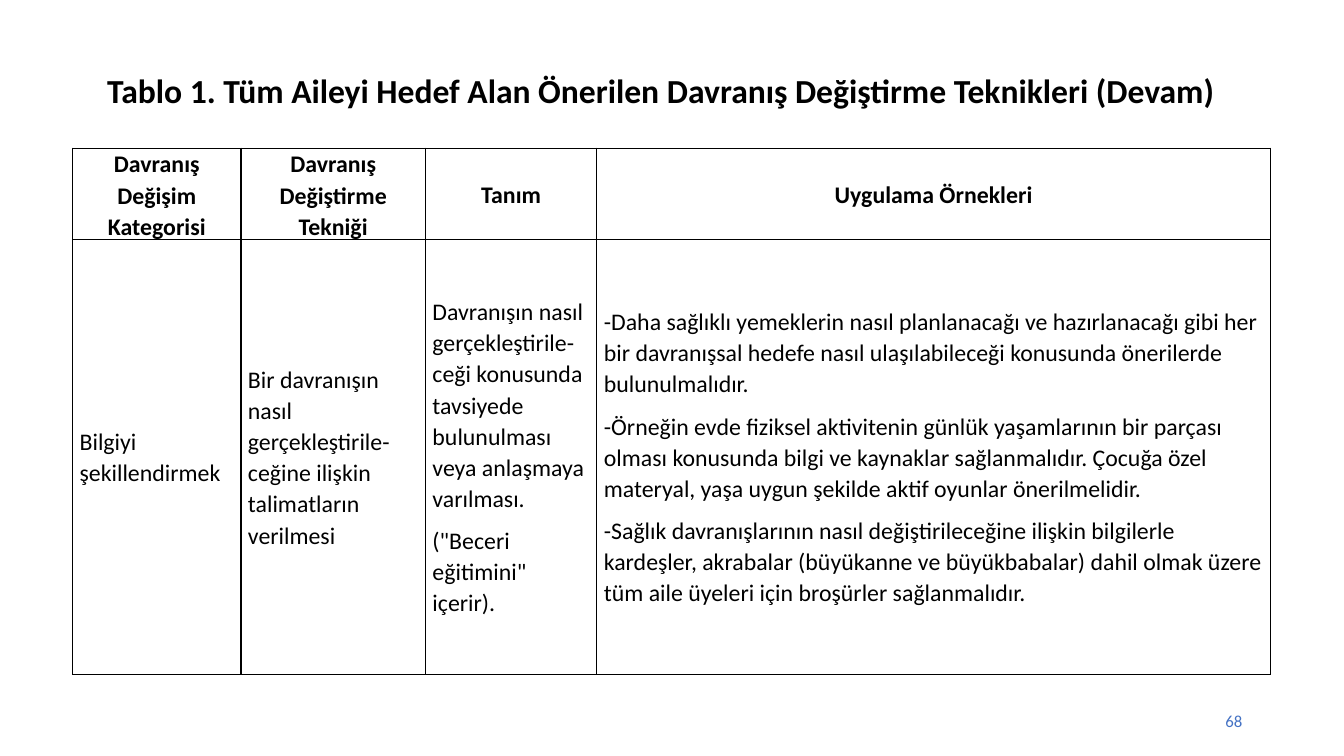
"""Build the slide with the table of behaviour change techniques for families."""
import pptx
import pptx.dml.color
import pptx.enum.text
import pptx.oxml
import pptx.oxml.ns
import pptx.util

Inches = pptx.util.Inches
Pt = pptx.util.Pt
ALIGN = pptx.enum.text.PP_ALIGN
MIDDLE = pptx.enum.text.MSO_ANCHOR.MIDDLE
BLACK = pptx.dml.color.RGBColor(0x00, 0x00, 0x00)
WHITE = pptx.dml.color.RGBColor(0xFF, 0xFF, 0xFF)
BLUE = pptx.dml.color.RGBColor(0x44, 0x72, 0xC4)


def style(para, size, color, bold, align):
    para.font.name = "Calibri"
    para.font.size = Pt(size)
    para.font.color.rgb = color
    para.font.bold = bold
    para.alignment = align


def border(cell):
    props = cell._tc.get_or_add_tcPr()
    for index, side in enumerate(("lnL", "lnR", "lnT", "lnB")):
        line = pptx.oxml.parse_xml(
            f'<a:{side} {pptx.oxml.ns.nsdecls("a")} w="12700"><a:solidFill>'
            f'<a:srgbClr val="{BLACK}"/></a:solidFill></a:{side}>')
        props.insert(index, line)


deck = pptx.Presentation()
deck.slide_width = Inches(13.33)
deck.slide_height = Inches(7.5)
slide = deck.slides.add_slide(deck.slide_layouts[6])

labels = [
    ("Tablo 1. Tüm Aileyi Hedef Alan Önerilen Davranış Değiştirme Teknikleri (Devam)",
     (0.61, 0.48, 11.89, 0.87), 24, BLACK, True, ALIGN.CENTER, 0.9),
    ("68", (9.42, 6.95, 3, 0.4), 12, BLUE, False, ALIGN.RIGHT, 1.0),
]
for text, place, size, color, bold, align, spacing in labels:
    frame = slide.shapes.add_textbox(*map(Inches, place)).text_frame
    frame.word_wrap = True
    frame.vertical_anchor = MIDDLE
    para = frame.paragraphs[0]
    para.text = text
    para.line_spacing = spacing
    style(para, size, color, bold, align)

widths = [1.67, 1.83, 1.7, 6.68]
heights = [0.81, 4.31]
rows = [
    [
        ["Davranış Değişim Kategorisi"],
        ["Davranış Değiştirme Tekniği"],
        ["Tanım"],
        ["Uygulama Örnekleri"],
    ],
    [
        ["Bilgiyi şekillendirmek"],
        ["Bir davranışın nasıl gerçekleştirile-ceğine ilişkin talimatların verilmesi"],
        ["Davranışın nasıl gerçekleştirile-ceği konusunda tavsiyede bulunulması "
         "veya anlaşmaya varılması.",
         '("Beceri eğitimini" içerir).'],
        ["-Daha sağlıklı yemeklerin nasıl planlanacağı ve hazırlanacağı gibi her bir "
         "davranışsal hedefe nasıl ulaşılabileceği konusunda önerilerde bulunulmalıdır.",
         "-Örneğin evde fiziksel aktivitenin günlük yaşamlarının bir parçası olması "
         "konusunda bilgi ve kaynaklar sağlanmalıdır. Çocuğa özel materyal, yaşa uygun "
         "şekilde aktif oyunlar önerilmelidir.",
         "-Sağlık davranışlarının nasıl değiştirileceğine ilişkin bilgilerle kardeşler, "
         "akrabalar (büyükanne ve büyükbabalar) dahil olmak üzere tüm aile üyeleri için "
         "broşürler sağlanmalıdır."],
    ],
]
table = slide.shapes.add_table(
    len(rows), len(widths), Inches(0.72), Inches(1.47),
    Inches(sum(widths)), Inches(sum(heights))).table
table.horz_banding = False
for column, width in zip(table.columns, widths):
    column.width = Inches(width)
for r, (height, texts) in enumerate(zip(heights, rows)):
    table.rows[r].height = Inches(height)
    head = r == 0
    for c, paras in enumerate(texts):
        cell = table.cell(r, c)
        cell.fill.solid()
        cell.fill.fore_color.rgb = WHITE
        border(cell)
        cell.vertical_anchor = MIDDLE
        cell.margin_left = cell.margin_right = Inches(0.07)
        cell.margin_top = cell.margin_bottom = 0
        cell.text_frame.text = "\n".join(paras)
        for para in cell.text_frame.paragraphs:
            para.line_spacing = 1.07
            para.space_after = Pt(0 if head else 8)
            style(para, 17, BLACK, head, ALIGN.CENTER if head else ALIGN.LEFT)

deck.save("out.pptx")
